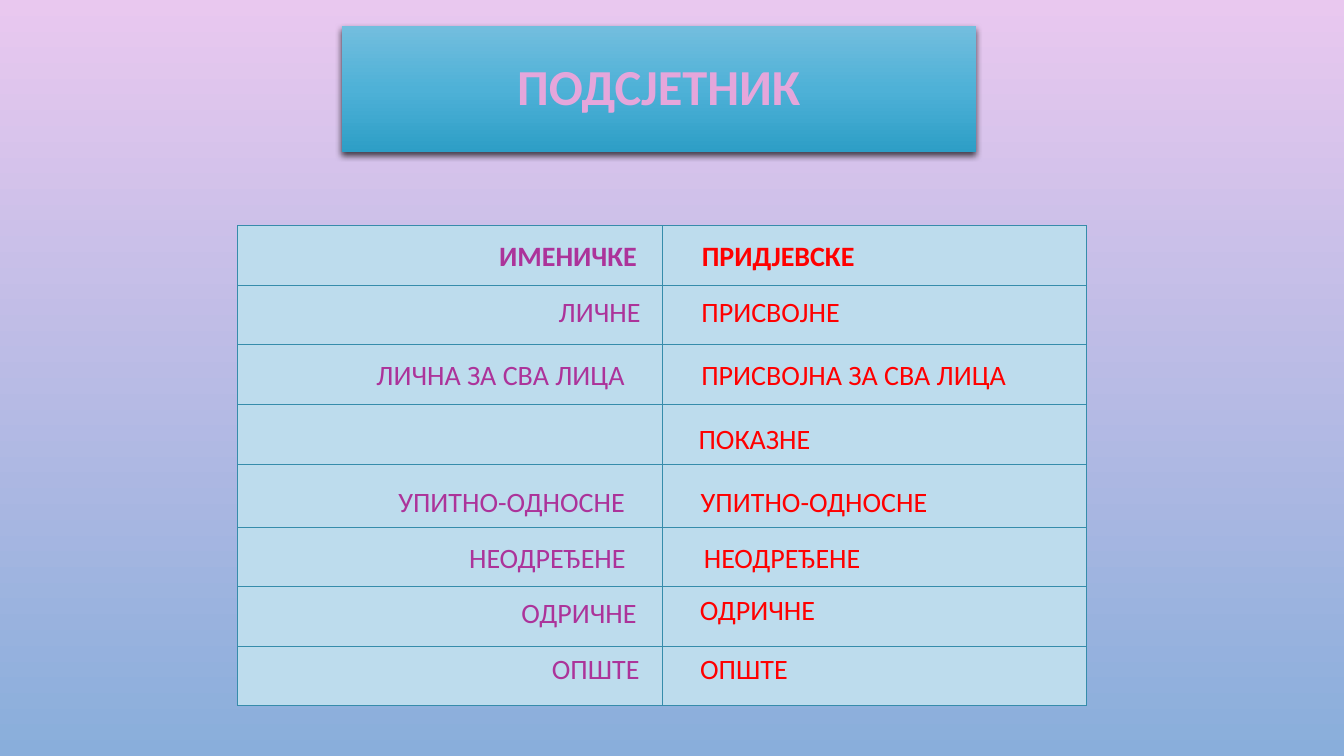
from lxml import etree
from pptx import Presentation, util as u
from pptx.dml.color import RGBColor
from pptx.enum import text
from pptx.oxml import parse_xml
from pptx.oxml.ns import nsdecls, qn

# Colours
PLUM = RGBColor(0xAC, 0x33, 0x9A)
RED = RGBColor(0xFF, 0x00, 0x00)
PINK = RGBColor(0xE5, 0xA6, 0xDB)
PALE_BLUE = RGBColor(0xBD, 0xDC, 0xED)
BORDER = RGBColor(0x36, 0x8C, 0xAB)
BLACK = RGBColor(0x00, 0x00, 0x00)
SKY = [(0, RGBColor(0xE9, 0xC8, 0xEF)), (100, RGBColor(0x89, 0xAE, 0xDB))]
BANNER = [(0, RGBColor(0x73, 0xBE, 0xDE)), (50, RGBColor(0x4E, 0xB1, 0xD7)),
          (100, RGBColor(0x2D, 0x9E, 0xC6))]

# Lengths are percentages of the slide's width and height
WIDTH, HEIGHT = u.Inches(13.33), u.Inches(7.5)
COLUMNS = [31.58] * 2
ROWS = [7.87] * 3 + [8, 8.27] + [7.87] * 3
LABEL_HEIGHT = 5.73
LABEL_TOPS = [30.93, 38.27, 46.67, 55.07, 63.47, 70.8, 78.13, 85.47]

# One entry a table row: wording, left, width
NOUN_PRONOUNS = [
    ("ИМЕНИЧКЕ", 35.48, 13.58),
    ("ЛИЧНЕ", 40.2, 8.85),
    ("ЛИЧНА ЗА СВА ЛИЦА", 25.43, 23.63),
    None,
    ("УПИТНО-ОДНОСНЕ", 27.15, 21.83),
    ("НЕОДРЕЂЕНЕ", 32.48, 16.5),
    ("ОДРИЧНЕ", 37.2, 11.78),
    ("ОПШТЕ", 39.6, 9.45),
]
ADJECTIVE_PRONOUNS = [
    ("ПРИДЈЕВСКЕ", 49.65, 16.5),
    ("ПРИСВОЈНЕ", 49.35, 15.98),
    ("ПРИСВОЈНА ЗА СВА ЛИЦА", 49.05, 28.95),
    ("ПОКАЗНЕ", 49.65, 12.98),
    ("УПИТНО-ОДНОСНЕ", 49.65, 21.83),
    ("НЕОДРЕЂЕНЕ", 49.65, 17.1),
    ("ОДРИЧНЕ", 50.18, 12.38),
    ("ОПШТЕ", 50.33, 10.05),
]


def across(share):
    return round(WIDTH * share / 100)


def down(share):
    return round(HEIGHT * share / 100)


def area(left, top, width, height):
    return across(left), down(top), across(width), down(height)


def apply(target, formats):
    for name, value in formats.items():
        setattr(target, name, value)


def solid(colour):
    return f'<a:solidFill><a:srgbClr val="{colour}"/></a:solidFill>'


def set_gradient(fill, element, stops):
    """Give a fill a gradient that runs from top to bottom."""
    fill.gradient()
    fill.gradient_angle = 270
    stop_list = element.xpath(".//a:gsLst")[0]
    for stop in list(stop_list):
        stop_list.remove(stop)
    for share, colour in stops:
        stop = etree.SubElement(stop_list, qn("a:gs"), pos=str(share * 1000))
        etree.SubElement(stop, qn("a:srgbClr"), val=str(colour))


def write(frame, wording, colour, size, bold):
    para = frame.paragraphs[0]
    para.alignment = text.PP_ALIGN.CENTER
    span = para.add_run()
    span.text = wording
    apply(span.font, {"name": "Calibri", "size": u.Pt(size), "bold": bold})
    span.font.color.rgb = colour
    return para, span


def add_title(page, wording):
    title = page.shapes.title
    apply(title, dict(zip(("left", "top", "width", "height"),
                          area(25.43, 3.47, 47.18, 16.67))))
    set_gradient(title.fill, title.element, BANNER)
    title.line.fill.background()
    title.element.spPr.append(parse_xml(
        f'<a:effectLst {nsdecls("a")}><a:outerShdw blurRad="{u.Pt(5)}" '
        f'dist="{u.Pt(2)}" dir="5400000" algn="ctr" rotWithShape="0">'
        f'<a:srgbClr val="{BLACK}"><a:alpha val="69000"/></a:srgbClr>'
        '</a:outerShdw></a:effectLst>'))
    apply(title.text_frame, {"word_wrap": True,
                             "vertical_anchor": text.MSO_ANCHOR.MIDDLE})
    para, span = write(title.text_frame, wording, PINK, 36, True)
    para.line_spacing = 0.9
    # Letter outline
    span.font.fill.solid()
    span.font.color.rgb = PINK
    para.runs[0]._r.get_or_add_rPr().insert(0, parse_xml(
        f'<a:ln {nsdecls("a")} w="{u.Pt(1.75)}">{solid(PLUM)}</a:ln>'))


def add_grid(page):
    frame = page.shapes.add_table(
        len(ROWS), len(COLUMNS), *area(17.7, 29.87, sum(COLUMNS), sum(ROWS)))
    table = frame.table
    apply(table, {"first_row": False, "horz_banding": False})
    for column, share in zip(table.columns, COLUMNS):
        column.width = across(share)
    for row, share in zip(table.rows, ROWS):
        row.height = down(share)
    for cell in table.iter_cells():
        cell.fill.solid()
        cell.fill.fore_color.rgb = PALE_BLUE
        for place, side in enumerate("LRTB"):
            cell._tc.get_or_add_tcPr().insert(place, parse_xml(
                f'<a:ln{side} {nsdecls("a")} w="{u.Pt(0.75)}">'
                f'{solid(BORDER)}</a:ln{side}>'))


def add_labels(page, entries, colour, tops):
    for row, (entry, top) in enumerate(zip(entries, tops)):
        if entry is None:
            continue
        wording, left, width = entry
        box = page.shapes.add_textbox(*area(left, top, width, LABEL_HEIGHT))
        apply(box.text_frame, {"word_wrap": True,
                               "auto_size": text.MSO_AUTO_SIZE.SHAPE_TO_FIT_TEXT})
        write(box.text_frame, wording, colour, 20, row == 0)


def main():
    deck = Presentation()
    apply(deck, {"slide_width": WIDTH, "slide_height": HEIGHT})
    page = deck.slides.add_slide(deck.slide_layouts.get_by_name("Title Only"))
    set_gradient(page.background.fill, page.element, SKY)
    add_title(page, "ПОДСЈЕТНИК")
    add_grid(page)
    add_labels(page, NOUN_PRONOUNS, PLUM, LABEL_TOPS)
    # The seventh adjective label sits slightly higher
    add_labels(page, ADJECTIVE_PRONOUNS, RED,
               LABEL_TOPS[:6] + [77.73] + LABEL_TOPS[7:])
    deck.save("out.pptx")


if __name__ == "__main__":
    main()
